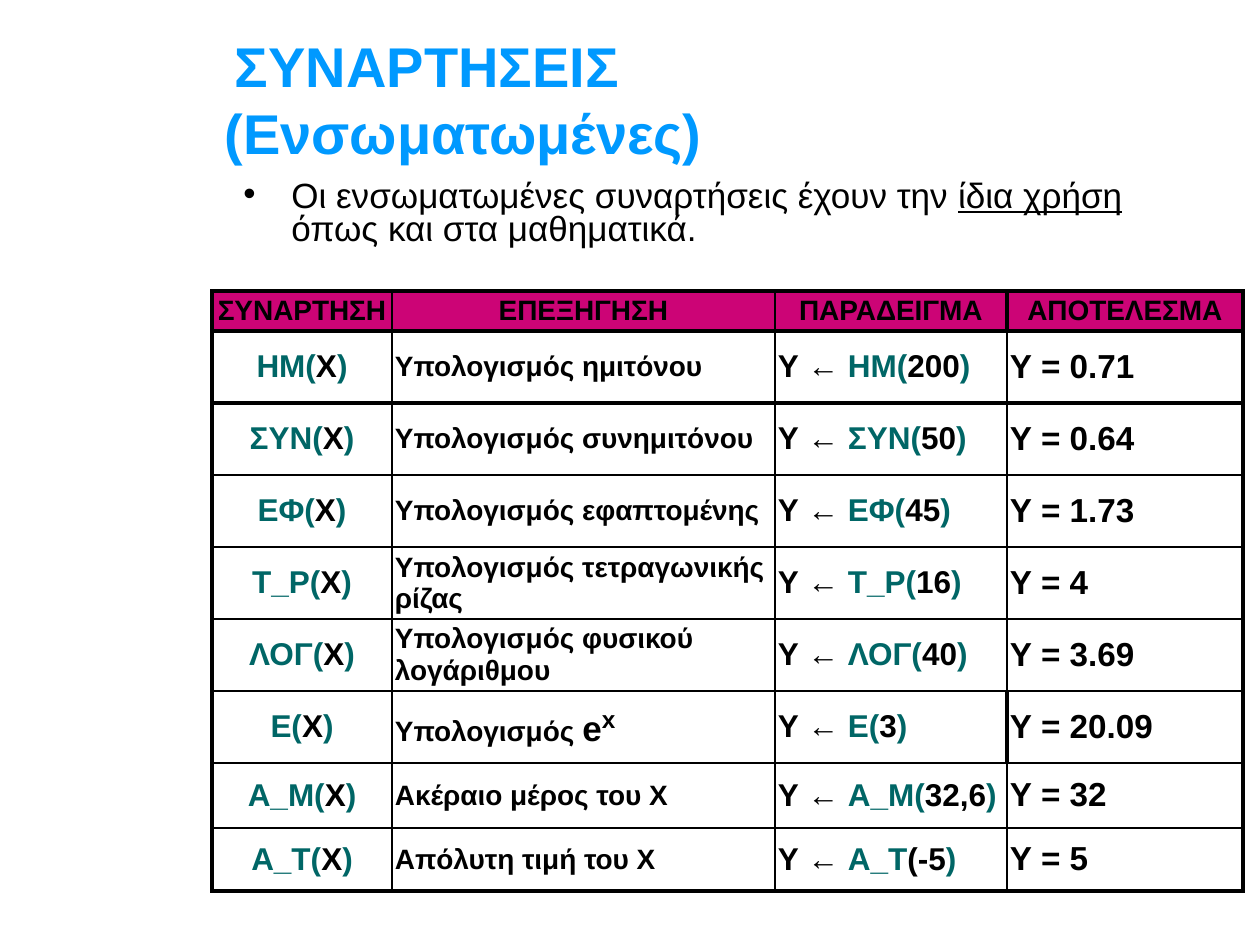
from dataclasses import dataclass

from lxml.etree import SubElement
from pptx import Presentation
from pptx.dml.color import RGBColor
from pptx.enum.text import MSO_ANCHOR, PP_ALIGN
from pptx.oxml import parse_xml
from pptx.oxml.ns import nsdecls, qn
from pptx.util import Emu, Pt

PX = 914400 / 126


@dataclass(frozen=True)
class Theme:
    font: str = "Arial"
    gap_font: str = "Roboto"
    title: str = "0099FF"
    keyword: str = "006666"
    ink: str = "000000"
    header: str = "CC0476"
    title_size: int = 32
    body_size: int = 20
    label_size: int = 16
    code_size: int = 18
    result_size: int = 19
    power_size: int = 24
    thin: float = 1
    thick: float = 2.25


theme = Theme()


def px(*lengths):
    return [Emu(round(n * PX)) for n in lengths]


def add_run(paragraph, text, size, color=theme.ink, bold=True, font=theme.font):
    run = paragraph.add_run()
    run.text = text
    run.font.name = font
    run.font.size = Pt(size)
    run.font.bold = bold
    run.font.color.rgb = RGBColor.from_string(color)
    return run


prs = Presentation()
prs.slide_width, prs.slide_height = px(1260, 945)
slide = prs.slides.add_slide(prs.slide_layouts[6])

# Title
title = slide.shapes.add_textbox(*px(212, 55, 988, 87)).text_frame
title.word_wrap = True
title.vertical_anchor = MSO_ANCHOR.MIDDLE
heading = title.paragraphs[0]
add_run(heading, " ", 24, theme.keyword, font=theme.gap_font)
add_run(heading, "ΣΥΝΑΡΤΗΣΕΙΣ", theme.title_size, theme.title)
heading.add_line_break()
add_run(heading, "(Ενσωματωμένες)", theme.title_size, theme.title)

# Introductory bullet
intro = slide.shapes.add_textbox(*px(231, 175, 966, 110)).text_frame
intro.word_wrap = True
point = intro.paragraphs[0]
properties = point._p.get_or_add_pPr()
indent = px(48)[0]
properties.set("marL", str(indent))
properties.set("indent", str(-indent))
SubElement(properties, qn("a:buFont"), typeface=theme.font)
SubElement(properties, qn("a:buChar"), char="•")
point.line_spacing = 0.8
for text, underlined in [
    ("Οι ενσωματωμένες συναρτήσεις έχουν την ", False),
    ("ίδια χρήση", True),
    (" όπως και στα μαθηματικά.", False),
]:
    add_run(point, text, theme.body_size, bold=False).font.underline = underlined

# Function table: name, explanation, example call, argument, result
headers = ["ΣΥΝΑΡΤΗΣΗ", "ΕΠΕΞΗΓΗΣΗ", "ΠΑΡΑΔΕΙΓΜΑ", "ΑΠΟΤΕΛΕΣΜΑ"]
functions = [
    ("ΗΜ(", "Υπολογισμός ημιτόνου", "ΗΜ(", "200", "0.71"),
    ("ΣΥΝ(", "Υπολογισμός συνημιτόνου", "ΣΥΝ(", "50", "0.64"),
    ("ΕΦ(", "Υπολογισμός εφαπτομένης", "ΕΦ(", "45", "1.73"),
    ("Τ_Ρ(", "Υπολογισμός τετραγωνικής ρίζας", "Τ_Ρ(", "16", "4"),
    ("ΛΟΓ(", "Υπολογισμός φυσικού λογάριθμου", "ΛΟΓ(", "40", "3.69"),
    ("Ε(", "Υπολογισμός ", "Ε(", "3", "20.09"),
    ("Α_Μ(", "Ακέραιο μέρος του Χ", "Α_Μ(", "32,6", "32"),
    ("Α_Τ(", "Απόλυτη τιμή του Χ", "Α_Τ", "(-5", "5"),
]
col_widths = [180, 383, 232, 236]
row_heights = [40] + [72] * 6 + [65, 63]
exponential_row = 6

table = slide.shapes.add_table(
    len(row_heights), len(col_widths),
    *px(212, 291, sum(col_widths), sum(row_heights))).table
table.first_row = table.horz_banding = False
for column, width in zip(table.columns, px(*col_widths)):
    column.width = width
for row, height in zip(table.rows, px(*row_heights)):
    row.height = height

for col, header in enumerate(headers):
    add_run(table.cell(0, col).text_frame.paragraphs[0], header, theme.label_size)

for row, (name, meaning, call, argument, result) in enumerate(functions, 1):
    name_p, meaning_p, example_p, result_p = (
        table.cell(row, col).text_frame.paragraphs[0] for col in range(4))
    add_run(name_p, name, theme.code_size, theme.keyword)
    add_run(name_p, "Χ", theme.code_size)
    add_run(name_p, ")", theme.code_size, theme.keyword)
    add_run(meaning_p, meaning, theme.label_size)
    if row == exponential_row:
        add_run(meaning_p, "e", theme.body_size)
        power = add_run(meaning_p, "x", theme.power_size)
        power._r.get_or_add_rPr().set("baseline", "30000")
    add_run(example_p, "Υ ← ", theme.code_size)
    add_run(example_p, call, theme.code_size, theme.keyword)
    add_run(example_p, argument, theme.code_size)
    add_run(example_p, ")", theme.code_size, theme.keyword)
    add_run(result_p, f"Υ = {result}", theme.result_size)

# Rule weights: thick outside and around the first two rows
last_row, last_col = len(row_heights), len(col_widths)
thick_rows = {0, 1, 2, last_row}
for row in range(last_row):
    thick_cols = {0, last_col}
    if row in (0, exponential_row):
        thick_cols.add(3)
    for col in range(last_col):
        cell = table.cell(row, col)
        cell.vertical_anchor = MSO_ANCHOR.MIDDLE
        cell.margin_left = cell.margin_right = px(3)[0]
        cell.margin_top = cell.margin_bottom = 0
        centred = row == 0 or col == 0
        cell.text_frame.paragraphs[0].alignment = (
            PP_ALIGN.CENTER if centred else PP_ALIGN.LEFT)
        if row == 0:
            cell.fill.solid()
            cell.fill.fore_color.rgb = RGBColor.from_string(theme.header)
        else:
            cell.fill.background()
        edges = [("L", col in thick_cols), ("R", col + 1 in thick_cols),
                 ("T", row in thick_rows), ("B", row + 1 in thick_rows)]
        for position, (side, heavy) in enumerate(edges):
            weight = Pt(theme.thick if heavy else theme.thin)
            cell._tc.get_or_add_tcPr().insert(position, parse_xml(
                f'<a:ln{side} {nsdecls("a")} w="{weight}"><a:solidFill>'
                f'<a:srgbClr val="{theme.ink}"/></a:solidFill></a:ln{side}>'))

prs.save("out.pptx")
